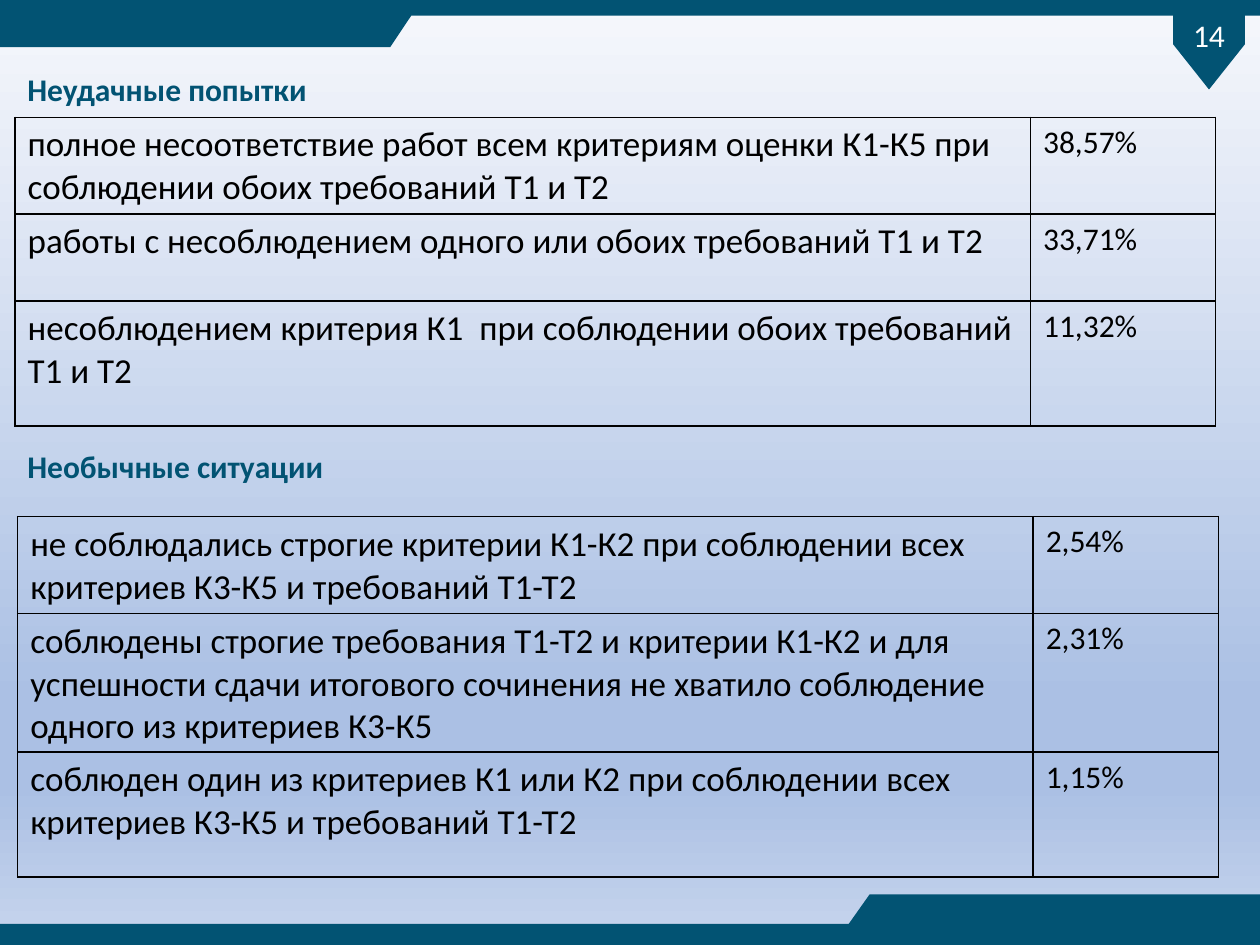
from lxml.etree import SubElement
from pptx import Presentation
from pptx.dml.color import RGBColor
from pptx.enum.shapes import MSO_SHAPE as Shape
from pptx.enum.text import MSO_ANCHOR as Anchor, PP_ALIGN as Align
from pptx.oxml.ns import qn
from pptx.util import Pt

COLORS = {"teal": "025373", "white": "FFFFFF", "black": "000000",
          "sky": "F6F8FC", "blue": "ABC0E4", "haze": "C7D5ED"}
FONT = "Calibri"
WIDTH, HEIGHT = 720, 540


def write(frame, text, size, color, bold=False):
    paragraph = frame.paragraphs[0]
    paragraph.text = text
    font = paragraph.font
    font.name, font.size, font.bold = FONT, Pt(size), bold
    font.color.rgb = RGBColor.from_string(COLORS[color])
    return paragraph


def paint(shape):
    shape.shadow.inherit = False
    shape.fill.solid()
    shape.fill.fore_color.rgb = RGBColor.from_string(COLORS["teal"])
    shape.line.fill.background()


prs = Presentation()
prs.slide_width, prs.slide_height = Pt(WIDTH), Pt(HEIGHT)
slide = prs.slides.add_slide(prs.slide_layouts[6])
shapes = slide.shapes

# Background gradient, top to bottom
background = slide.background.fill
background.gradient()
background.gradient_angle = 270
stops = next(slide.element.iter(qn("a:gsLst")))
for stop in list(stops):
    stops.remove(stop)
for percent, color in [(0, "sky"), (74, "blue"), (83, "blue"), (100, "haze")]:
    stop = SubElement(stops, qn("a:gs"), pos=str(percent * 1000))
    SubElement(stop, qn("a:srgbClr"), val=COLORS[color])

# Bottom band, and the same band turned by 180 degrees at the top
band = [(496.8, 511.2), (WIDTH, 511.2), (WIDTH, HEIGHT),
        (0, HEIGHT), (0, 528.5), (484.6, 528.5)]
turned_band = [(WIDTH - x, 537.8 - y) for x, y in band]
for points in (band, turned_band):
    outline = shapes.build_freeform(*points[0], scale=Pt(1))
    outline.add_line_segments(points[1:], close=True)
    paint(outline.convert_to_shape())

# Page number flag, pointing down with upright text
flag = shapes.add_shape(Shape.PENTAGON, Pt(666), Pt(5.8), Pt(49.7), Pt(41))
flag.rotation = 90
flag.adjustments[0] = 0.63
paint(flag)
number = flag.text_frame
number.margin_left = number.margin_right = Pt(0.7)
number.margin_top = number.margin_bottom = Pt(0.7)
number.vertical_anchor = Anchor.MIDDLE
next(flag.element.iter(qn("a:bodyPr"))).set("vert", "vert270")
write(number, "14", 18, "white").alignment = Align.CENTER

# Sections: heading, its top and width, table left and top, row heights, rows
sections = [
    ("Неудачные попытки", 36.7, 175.7, 8.6, 67, (55.4, 49.7, 71.3), [
        ("полное несоответствие работ всем критериям оценки К1-К5 при "
         "соблюдении обоих требований Т1 и Т2", "38,57%"),
        ("работы с несоблюдением одного или обоих требований Т1 и Т2", "33,71%"),
        ("несоблюдением критерия К1  при соблюдении обоих требований Т1 и Т2",
         "11,32%"),
    ]),
    ("Необычные ситуации", 252, 185, 10.1, 295.2, (55.4, 79.2, 71.3), [
        ("не соблюдались строгие критерии К1-К2 при соблюдении всех "
         "критериев К3-К5 и требований Т1-Т2", "2,54%"),
        ("соблюдены строгие требования Т1-Т2 и критерии К1-К2 и для успешности "
         "сдачи итогового сочинения не хватило соблюдение одного из критериев К3-К5",
         "2,31%"),
        ("соблюден один из критериев К1 или К2 при соблюдении всех "
         "критериев К3-К5 и требований Т1-Т2", "1,15%"),
    ]),
]
column_widths = (580.3, 105.8)
for title, title_top, title_width, left, top, heights, rows in sections:
    heading = shapes.add_textbox(Pt(8.6), Pt(title_top), Pt(title_width), Pt(29))
    heading.text_frame.word_wrap = False
    write(heading.text_frame, title, 18, "teal", bold=True)

    table = shapes.add_table(len(rows), 2, Pt(left), Pt(top),
                             Pt(sum(column_widths)), Pt(sum(heights))).table
    table.first_row = table.horz_banding = False
    for column, width in zip(table.columns, column_widths):
        column.width = Pt(width)
    for r, (height, row) in enumerate(zip(heights, rows)):
        table.rows[r].height = Pt(height)
        for c, (text, size) in enumerate(zip(row, (20, 18))):
            cell = table.cell(r, c)
            write(cell.text_frame, text, size, "black")
            # Borders go before the fill in the cell properties
            properties = cell._tc.get_or_add_tcPr()
            for side in ("lnL", "lnR", "lnT", "lnB"):
                border = SubElement(properties, qn(f"a:{side}"), w=str(Pt(1)))
                ink = SubElement(border, qn("a:solidFill"))
                SubElement(ink, qn("a:srgbClr"), val=COLORS["black"])
            cell.fill.background()

prs.save("out.pptx")
